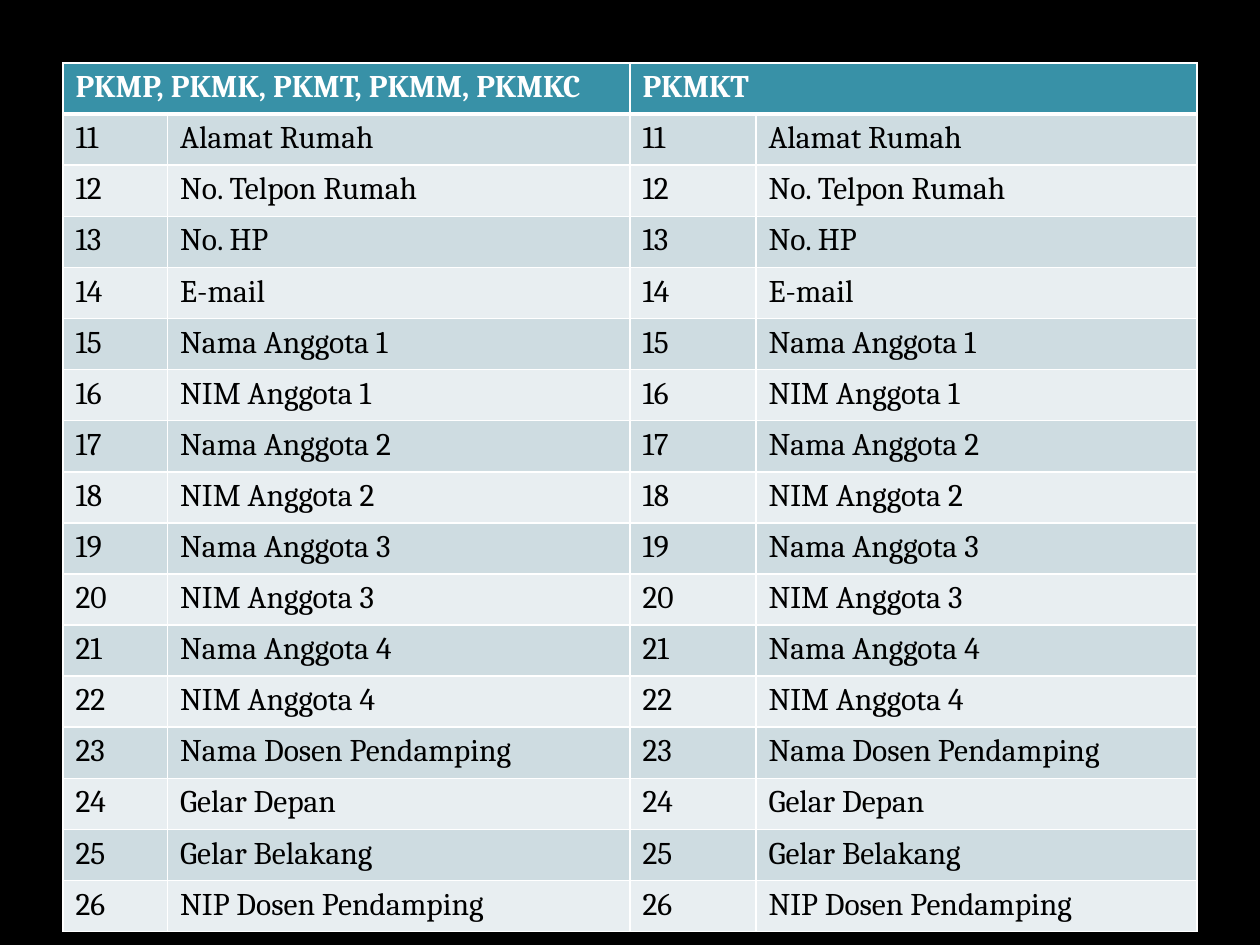
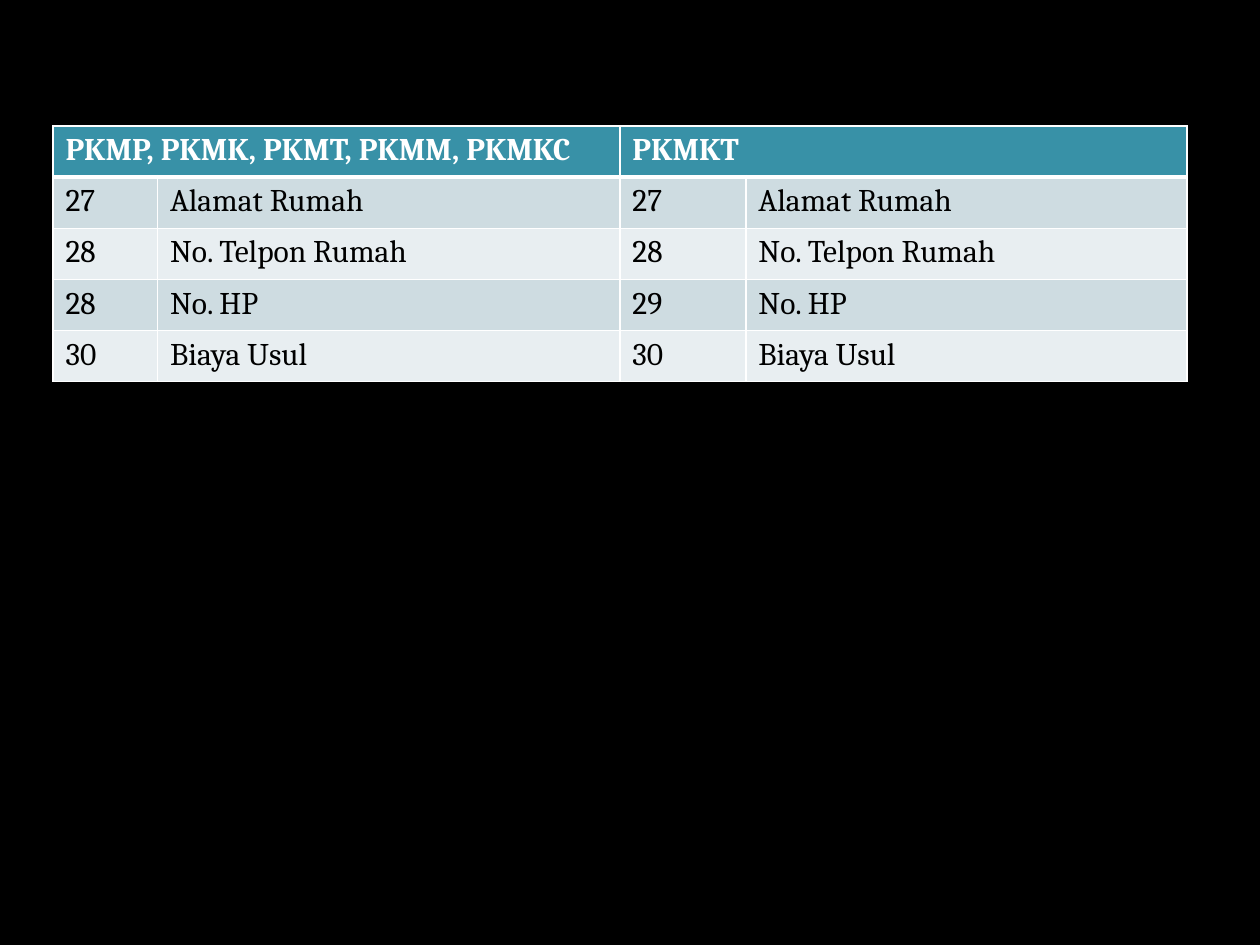
import pptx
import pptx.dml.color
import pptx.oxml
import pptx.oxml.ns
import pptx.util

Inches, Pt = pptx.util.Inches, pptx.util.Pt

# Content: each row is (left number, right number, field name)
GROUPS = ["PKMP, PKMK, PKMT, PKMM, PKMKC", "PKMKT"]
MEMBER_FIELDS = [f"{field} Anggota {n}" for n in range(1, 5) for field in ("Nama", "NIM")]
FIELDS = ["Alamat Rumah", "No. Telpon Rumah", "No. HP", "E-mail", *MEMBER_FIELDS,
          "Nama Dosen Pendamping", "Gelar Depan", "Gelar Belakang", "NIP Dosen Pendamping"]
TABLES = [
    {"left": 0.5, "top": 0.5, "height": 6.9,
     "rows": [(n, n, field) for n, field in enumerate(FIELDS, 11)]},
    {"left": 0.42, "top": 1, "height": 2.03,
     "rows": [(27, 27, "Alamat Rumah"), (28, 28, "No. Telpon Rumah"),
              (28, 29, "No. HP"), (30, 30, "Biaya Usul")]},
]

# Shared style
FONT, SIZE = "Cambria", 18
BLACK, WHITE, TEAL = "000000", "FFFFFF", "3891A7"
BANDS = ["CEDCE1", "E8EEF1"]
COLUMNS = [0.83, 3.67, 1, 3.5]
THIN, THICK = 1, 3


def rgb(value):
    return pptx.dml.color.RGBColor.from_string(value)


def set_borders(cell, top, bottom):
    tc_pr = cell._tc.get_or_add_tcPr()
    for side, width in (("L", THIN), ("R", THIN), ("T", top), ("B", bottom)):
        tc_pr.append(pptx.oxml.parse_xml(
            f'<a:ln{side} {pptx.oxml.ns.nsdecls("a")} w="{Pt(width)}">'
            f'<a:solidFill><a:srgbClr val="{WHITE}"/></a:solidFill></a:ln{side}>'))


def style_cell(cell, row):
    header = row == 0
    set_borders(cell, THICK if row == 1 else THIN, THICK if header else THIN)
    cell.fill.solid()
    cell.fill.fore_color.rgb = rgb(TEAL if header else BANDS[(row - 1) % 2])
    font = cell.text_frame.paragraphs[0].font
    font.name, font.size, font.bold = FONT, Pt(SIZE), header
    font.color.rgb = rgb(WHITE if header else BLACK)


def add_field_table(slide, left, top, height, rows):
    table = slide.shapes.add_table(len(rows) + 1, len(COLUMNS), Inches(left), Inches(top),
                                   Inches(sum(COLUMNS)), Inches(height)).table
    for column, width in zip(table.columns, COLUMNS):
        column.width = Inches(width)

    # Header cells span a number column and a field column
    for i, group in enumerate(GROUPS):
        cell = table.cell(0, 2 * i)
        cell.merge(table.cell(0, 2 * i + 1))
        cell.text = group

    # Body
    for r, (left_number, right_number, field) in enumerate(rows, 1):
        for c, text in enumerate((left_number, field, right_number, field)):
            table.cell(r, c).text = str(text)

    for r in range(len(rows) + 1):
        for c in range(len(COLUMNS)):
            style_cell(table.cell(r, c), r)


def main():
    prs = pptx.Presentation()
    prs.slide_width, prs.slide_height = Inches(10), Inches(7.5)
    background = prs.slide_master.background.fill
    background.solid()
    background.fore_color.rgb = rgb(BLACK)
    blank = prs.slide_layouts[6]
    for table in TABLES:
        add_field_table(prs.slides.add_slide(blank), **table)
    prs.save("out.pptx")


if __name__ == "__main__":
    main()
